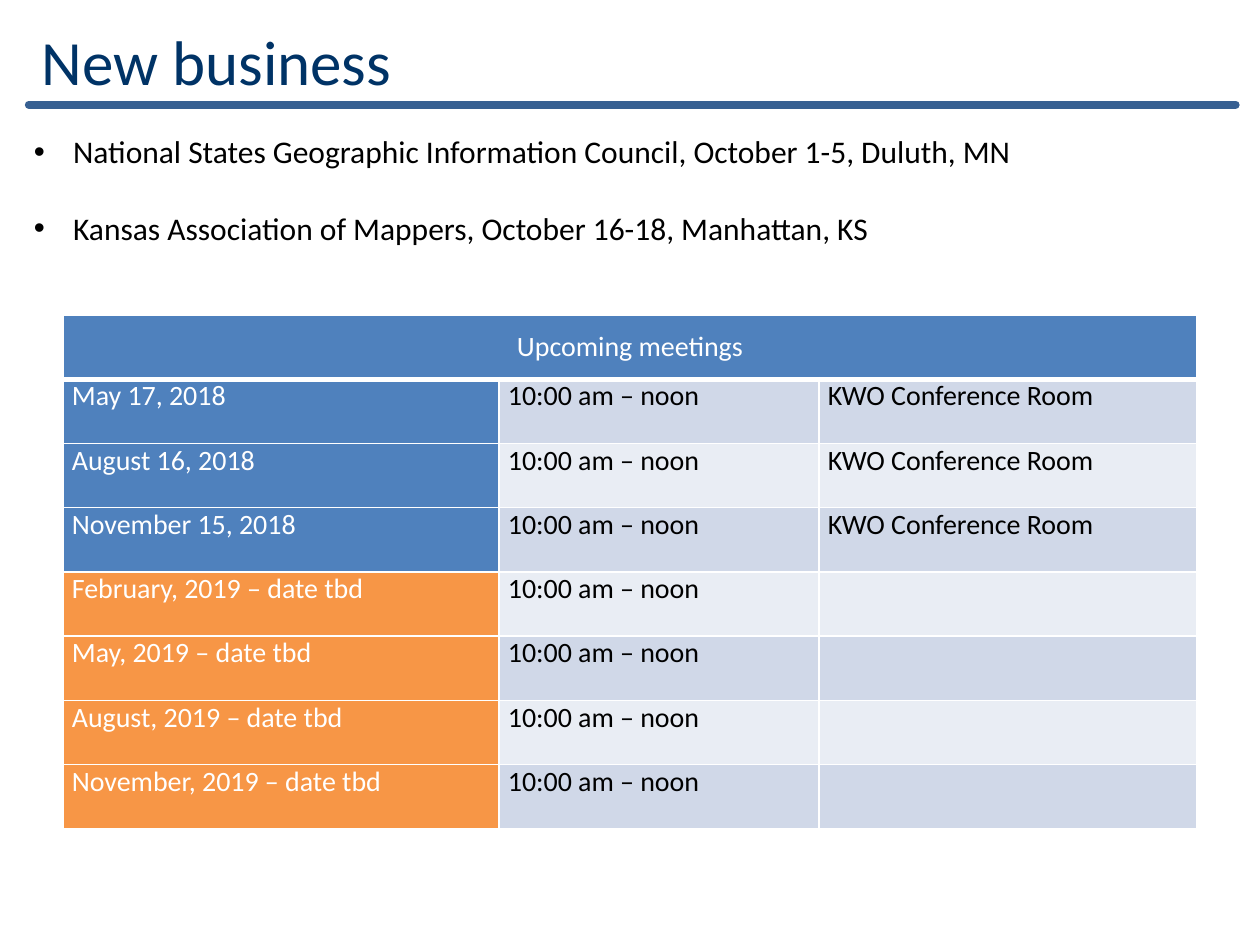
from lxml import etree
from pptx import Presentation
from pptx.dml.color import RGBColor
from pptx.enum import shapes, text
from pptx.oxml import ns
from pptx.util import Cm, Pt

NAVY = RGBColor(0x00, 0x33, 0x66)
RULE_BLUE = RGBColor(0x37, 0x60, 0x92)
BLUE = RGBColor(0x4F, 0x81, 0xBD)
ORANGE = RGBColor(0xF7, 0x96, 0x46)
BAND_DARK = RGBColor(0xD0, 0xD8, 0xE8)
BAND_LIGHT = RGBColor(0xE9, 0xED, 0xF4)
WHITE = RGBColor(0xFF, 0xFF, 0xFF)
BLACK = RGBColor(0x00, 0x00, 0x00)
FONT = "Calibri"

EVENTS = [
    "National States Geographic Information Council, October 1-5, Duluth, MN",
    "Kansas Association of Mappers, October 16-18, Manhattan, KS",
]
HOURS = "10:00 am – noon"
ROOM = "KWO Conference Room"
SCHEDULED = ["May 17, 2018", "August 16, 2018", "November 15, 2018"]
TENTATIVE = ["February, 2019", "May, 2019", "August, 2019", "November, 2019"]


def place(part, left, top, width, height):
    part.left, part.top, part.width, part.height = left, top, width, height


def add_text(paragraph, words, size, color):
    run = paragraph.add_run()
    run.text = words
    run.font.name = FONT
    run.font.size = Pt(size)
    run.font.bold = False
    run.font.color.rgb = color


def add_heading(slide, left, top, width, height):
    heading = slide.shapes.title
    place(heading, left, top, Cm(7.65), height)
    frame = heading.text_frame
    frame.word_wrap = False
    frame.auto_size = text.MSO_AUTO_SIZE.SHAPE_TO_FIT_TEXT
    frame.vertical_anchor = text.MSO_ANCHOR.TOP
    frame.paragraphs[0].alignment = text.PP_ALIGN.LEFT
    add_text(frame.paragraphs[0], "New business", 36, NAVY)

    # Rule under the heading
    bottom = top + height
    rule = slide.shapes.add_connector(
        shapes.MSO_CONNECTOR.STRAIGHT, left, bottom, left + width, bottom)
    rule.line.color.rgb = RULE_BLUE
    rule.line.width = Pt(4.5)
    rule.line._get_or_add_ln().set("cap", "rnd")
    etree.SubElement(rule._element.spPr, ns.qn("a:effectLst"))


def add_events(slide, left, top, width, height):
    events = slide.placeholders[1]
    place(events, left, top, width, height)
    frame = events.text_frame
    frame.word_wrap = True
    frame.auto_size = text.MSO_AUTO_SIZE.SHAPE_TO_FIT_TEXT
    for number, event in enumerate(EVENTS):
        paragraph = frame.add_paragraph() if number else frame.paragraphs[0]
        paragraph.space_before = Pt(22 if number else 0)
        properties = paragraph._p.get_or_add_pPr()
        properties.set("marL", str(Cm(0.79)))
        properties.set("indent", str(-Cm(0.79)))
        bullet_font = etree.SubElement(properties, ns.qn("a:buFont"))
        bullet_font.set("typeface", "Arial")
        etree.SubElement(properties, ns.qn("a:buChar")).set("char", "•")
        add_text(paragraph, event, 18, BLACK)


def set_borders(cell, **widths):
    """Draw white borders; sides default to 1 pt."""
    properties = cell._tc.get_or_add_tcPr()
    for position, side in enumerate("LRTB"):
        line = etree.Element(ns.qn(f"a:ln{side}"))
        line.set("w", str(Pt(widths.get(side, 1))))
        fill = etree.SubElement(line, ns.qn("a:solidFill"))
        etree.SubElement(fill, ns.qn("a:srgbClr")).set("val", str(WHITE))
        properties.insert(position, line)


def fill_cell(cell, words, fill, color):
    cell.fill.solid()
    cell.fill.fore_color.rgb = fill
    cell.margin_left = cell.margin_right = Cm(0.18)
    cell.margin_top = cell.margin_bottom = 0
    if words:
        add_text(cell.text_frame.paragraphs[0], words, 16, color)


def add_meetings(slide, left, top, width, height):
    rows = [(date, ROOM, BLUE) for date in SCHEDULED]
    rows += [(f"{date} – date tbd", "", ORANGE) for date in TENTATIVE]
    meetings = slide.shapes.add_table(
        len(rows) + 1, 3, left, top, width, height).table
    meetings.horz_banding = False
    date_width, hours_width = Cm(8.79), Cm(6.45)
    column_widths = (date_width, hours_width, width - date_width - hours_width)
    for column, column_width in zip(meetings.columns, column_widths):
        column.width = column_width

    # Header across all columns
    header = meetings.cell(0, 0)
    header.merge(meetings.cell(0, 2))
    fill_cell(header, "Upcoming meetings", BLUE, WHITE)
    header.vertical_anchor = text.MSO_ANCHOR.MIDDLE
    header.text_frame.paragraphs[0].alignment = text.PP_ALIGN.CENTER
    for cell in meetings.rows[0].cells:
        set_borders(cell, B=3)

    # One row for each meeting
    for number, (date, room, date_fill) in enumerate(rows, 1):
        band = BAND_DARK if number % 2 else BAND_LIGHT
        fill_cell(meetings.cell(number, 0), date, date_fill, WHITE)
        fill_cell(meetings.cell(number, 1), HOURS, band, BLACK)
        fill_cell(meetings.cell(number, 2), room, band, BLACK)
        for cell in meetings.rows[number].cells:
            set_borders(cell, T=3 if number == 1 else 1)


def main():
    deck = Presentation()
    deck.slide_width, deck.slide_height = Cm(25.4), Cm(19.05)
    slide = deck.slides.add_slide(deck.slide_layouts[1])
    add_heading(slide, Cm(0.58), Cm(0.33), Cm(24.33), Cm(1.78))
    add_events(slide, Cm(0.43), Cm(2.54), Cm(24.33), Cm(2.57))
    add_meetings(slide, Cm(1.27), Cm(6.35), Cm(22.86), Cm(10.36))
    deck.save("out.pptx")


if __name__ == "__main__":
    main()
